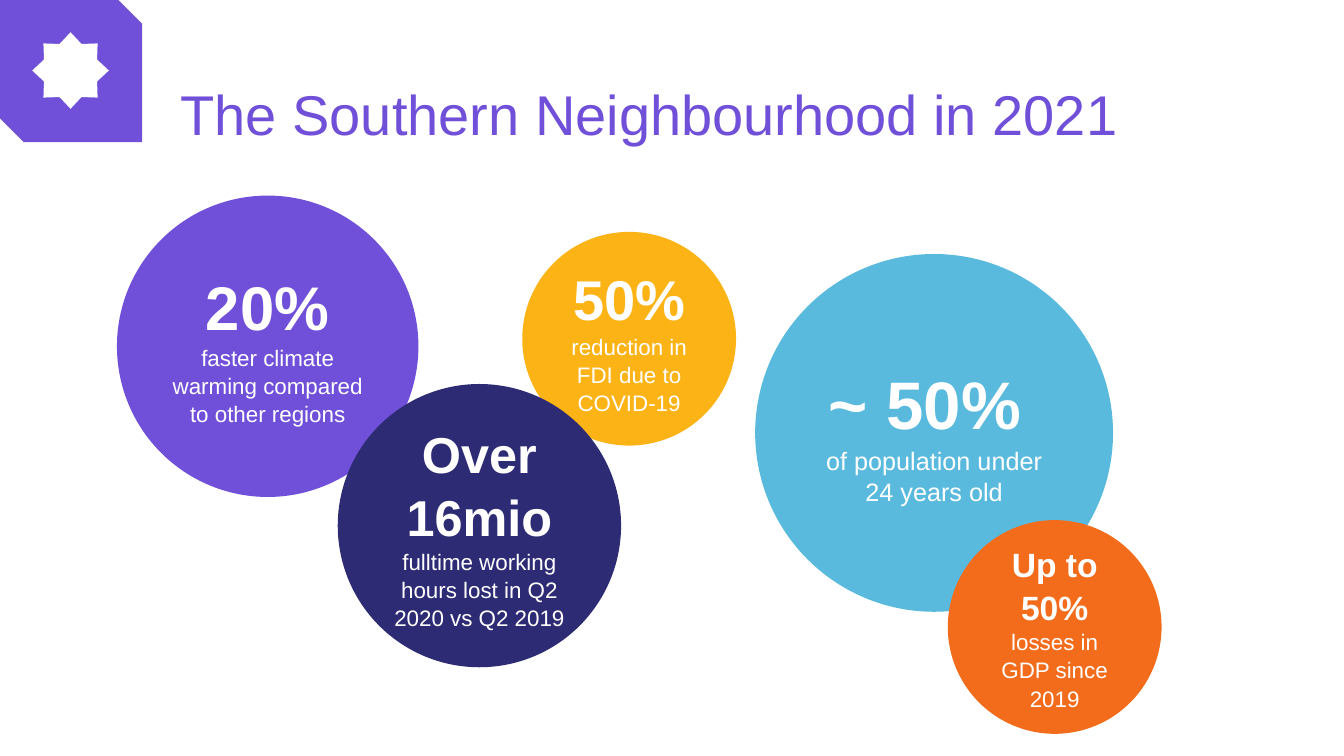
from pptx import Presentation
from pptx import util as u
from pptx.dml.color import RGBColor
from pptx.enum import shapes, text

theme = {
    "face": "Arial", "title": 40, "lead": 1.05,
    "violet": "704FD9", "amber": "FCB316", "sky": "59BADE",
    "navy": "2E2B75", "orange": "F26C1B", "white": "FFFFFF",
}
kind = shapes.MSO_SHAPE

deck = Presentation()
deck.slide_width, deck.slide_height = u.Inches(13.33), u.Inches(7.5)
col, row = deck.slide_width / 100, deck.slide_height / 100
slide = deck.slides.add_slide(deck.slide_layouts[5])


def draw(form, left, top, size, fill):
    shape = slide.shapes.add_shape(
        form, int(left * col), int(top * row), int(size * row), int(size * row))
    shape.shadow.inherit = False
    shape.fill.solid()
    shape.fill.fore_color.rgb = RGBColor.from_string(theme[fill])
    shape.line.fill.background()
    return shape


def style(para, size, hue, bold):
    look = {"name": theme["face"], "size": u.Pt(size), "bold": bold}
    for key, value in look.items():
        setattr(para.font, key, value)
    para.font.color.rgb = RGBColor.from_string(theme[hue])


draw(kind.SNIP_2_DIAG_RECTANGLE, 0, 0, 18.8, "violet")
draw(kind.STAR_8_POINT, 2.4, 4.27, 10.13, "white")

title = slide.shapes.title
place = {"left": 12.68 * col, "top": 8 * row, "width": 86.27 * col, "height": 11.47 * row}
for key, value in place.items():
    setattr(title, key, int(value))
frame = title.text_frame
frame.text = "The Southern Neighbourhood in 2021"
setup = {
    "vertical_anchor": text.MSO_ANCHOR.BOTTOM, "auto_size": text.MSO_AUTO_SIZE.NONE,
    "word_wrap": True, "margin_bottom": 0,
}
for key, value in setup.items():
    setattr(frame, key, value)
head = frame.paragraphs[0]
head.alignment = text.PP_ALIGN.LEFT
head.line_spacing = 0.9
style(head, theme["title"], "violet", False)

facts = [
    (8.7, 25.87, 39.87, "violet", "20%", 44, "faster climate warming compared to other regions", 16),
    (38.86, 30.67, 28.27, "amber", "50%", 40, "reduction in FDI due to COVID-19", 16),
    (56.19, 33.6, 47.33, "sky", "~ 50% ", 48, "of population under 24 years old", 18),
    (25.13, 50.8, 37.47, "navy", "Over 16mio", 36,
     "fulltime working hours lost in Q2 2020 vs Q2 2019", 16),
    (70.52, 68.8, 28.27, "orange", "Up to 50%", 24, "losses in GDP since 2019", 16),
]
for left, top, size, fill, stat, big, note, small in facts:
    frame = draw(kind.OVAL, left, top, size, fill).text_frame
    frame.word_wrap = True
    frame.vertical_anchor = text.MSO_ANCHOR.MIDDLE
    frame.text = stat
    frame.add_paragraph().text = note
    for para, points, bold in zip(frame.paragraphs, (big, small), (True, False)):
        para.alignment = text.PP_ALIGN.CENTER
        para.line_spacing = theme["lead"]
        style(para, points, "white", bold)

deck.save("out.pptx")
